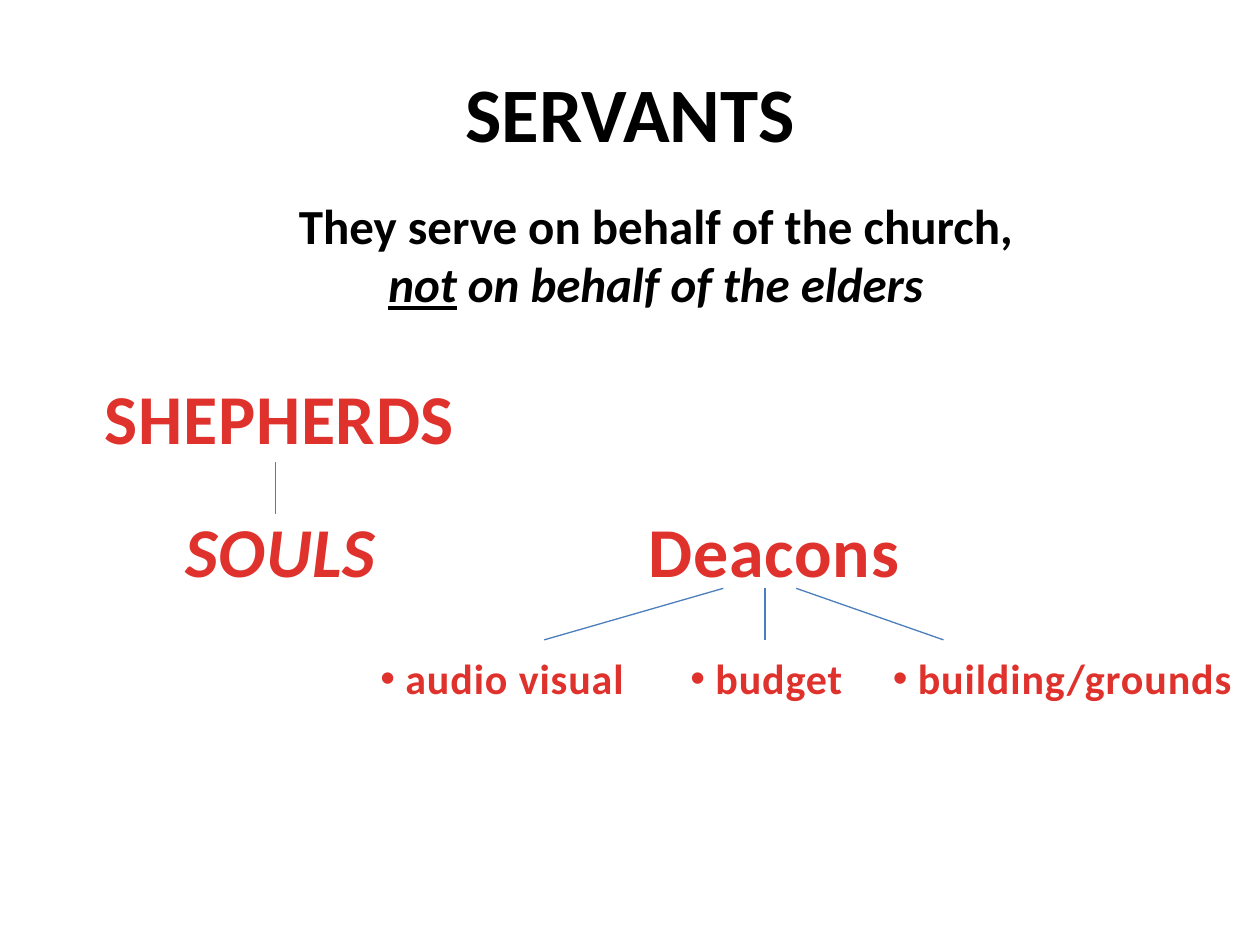
from lxml import etree
from pptx import Presentation
from pptx.dml.color import RGBColor
from pptx.enum.shapes import MSO_CONNECTOR
from pptx.enum.text import MSO_ANCHOR, PP_ALIGN
from pptx.oxml.ns import qn
from pptx.util import Cm, Pt

STRAIGHT = MSO_CONNECTOR.STRAIGHT
CENTER, LEFT = PP_ALIGN.CENTER, PP_ALIGN.LEFT
MIDDLE = MSO_ANCHOR.MIDDLE
BLACK = RGBColor(0x00, 0x00, 0x00)
RED = RGBColor(0xE0, 0x32, 0x2D)
BLUE = RGBColor(0x4B, 0x7E, 0xBC)
FONT = "Calibri"
HEADING_HEIGHT = 1.96


def format_run(run, size, color, italic=None, underline=None):
    font = run.font
    font.name, font.size, font.bold = FONT, Pt(size), True
    font.color.rgb = color
    font.italic, font.underline = italic, underline


def add_label(slide, box, text, size, italic=None, bullet=False):
    """Red, slightly spaced single-line text."""
    label = slide.shapes.add_textbox(*map(Cm, box))
    label.text_frame.word_wrap = False
    paragraph = label.text_frame.paragraphs[0]
    paragraph.text = text
    paragraph.alignment = LEFT if bullet else CENTER
    format_run(paragraph.runs[0], size, RED, italic)
    paragraph.runs[0].font._element.set("spc", "50")
    if bullet:
        properties = paragraph._p.get_or_add_pPr()
        etree.SubElement(properties, qn("a:buFont"), typeface="Arial")
        etree.SubElement(properties, qn("a:buChar"), char="•")


def add_branch(slide, start_x, start_y, end_x, end_y):
    branch = slide.shapes.add_connector(
        STRAIGHT, Cm(start_x), Cm(start_y), Cm(end_x), Cm(end_y))
    branch.line.color.rgb = BLUE
    branch.line.width = Pt(0.75)
    etree.SubElement(branch._element.spPr, qn("a:effectLst"))


def place_title(slide, box):
    title = slide.shapes.title
    title.left, title.top, title.width, title.height = map(Cm, box)
    title.text_frame.text = "SERVANTS"
    title.text_frame.vertical_anchor = MIDDLE
    paragraph = title.text_frame.paragraphs[0]
    paragraph.alignment = CENTER
    format_run(paragraph.runs[0], 44, BLACK)


def place_statement(slide, box):
    statement = slide.shapes.add_textbox(*map(Cm, box))
    statement.text_frame.word_wrap = True
    paragraph = statement.text_frame.paragraphs[0]
    paragraph.alignment = CENTER
    for text, italic, underline in (
        ("They serve on behalf of the church, ", None, None),
        ("not", True, True),
        (" on behalf of the elders", True, False),
    ):
        run = paragraph.add_run()
        run.text = text
        format_run(run, 28, BLACK, italic, underline)


def place_shepherds(slide, left, top, width):
    add_label(slide, (left, top, width, HEADING_HEIGHT), "SHEPHERDS", 40)
    add_label(slide, (left + 1.63, top + 2.69, 4.45, HEADING_HEIGHT),
              "SOULS", 40, italic=True)
    add_branch(slide, left + 3.76, top + 1.9, left + 3.76, top + 2.94)


def place_deacons(slide, left, top):
    add_label(slide, (left + 5.36, top, 5.64, HEADING_HEIGHT), "Deacons", 40)
    # Each duty: text, offset, width, branch start and end
    for duty, offset, width, start, end in (
        ("audio visual", 0, 5.49, 7.16, 3.55),
        ("budget", 6.25, 3.63, 8, 8),
        ("building/grounds", 10.33, 7.42, 8.63, 11.6),
    ):
        add_label(slide, (left + offset, top + 2.92, width, 1.27),
                  " " + duty, 24, bullet=True)
        add_branch(slide, left + start, top + 1.75, left + end, top + 2.79)


def main():
    presentation = Presentation()
    presentation.slide_width, presentation.slide_height = Cm(25.4), Cm(19.05)
    slide = presentation.slides.add_slide(presentation.slide_layouts[0])
    # Only the title placeholder is needed
    subtitle = slide.placeholders[1]._element
    subtitle.getparent().remove(subtitle)

    place_title(slide, (1.91, 0.2, 21.59, 4.09))
    place_statement(slide, (5.28, 3.81, 15.88, 2.64))
    place_shepherds(slide, 1.8, 7.42, 7.67)
    place_deacons(slide, 7.42, 10.11)
    presentation.save("out.pptx")


if __name__ == "__main__":
    main()
